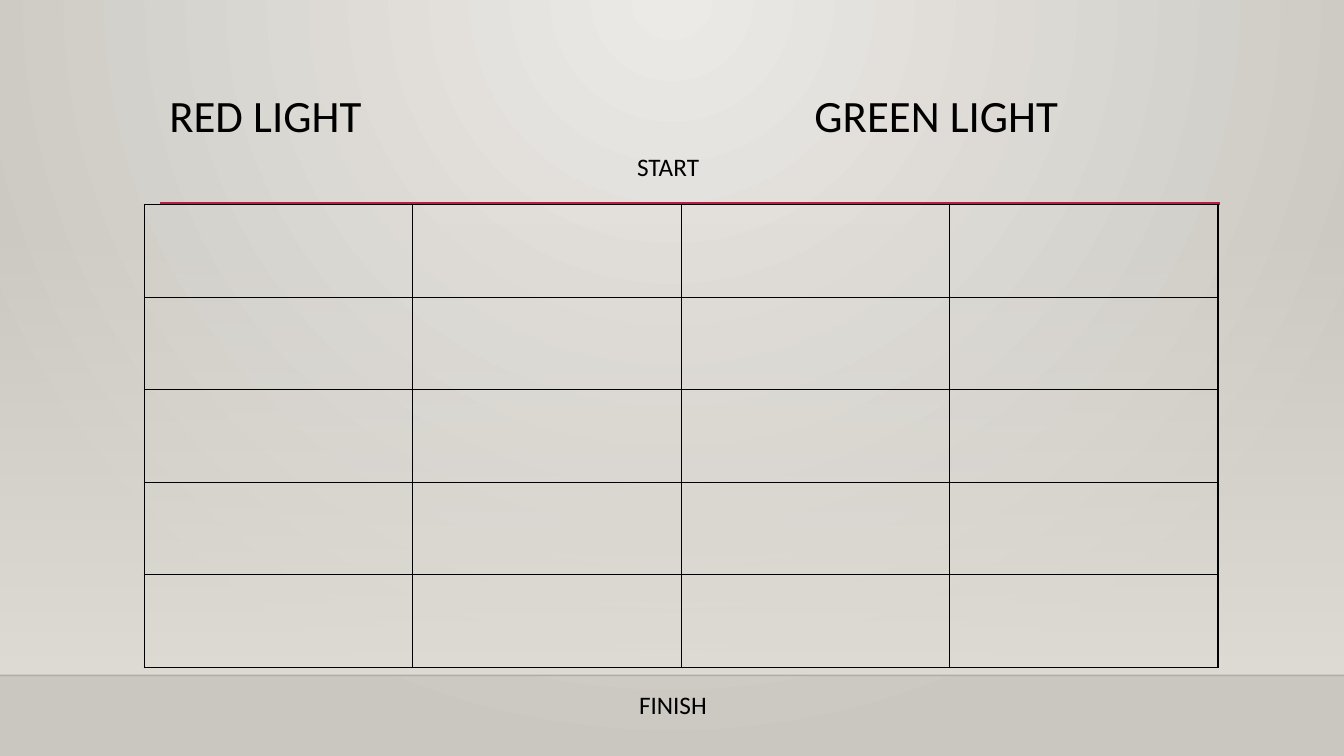
import pptx
import pptx.util
import pptx.dml.color
import pptx.enum.shapes
import pptx.enum.text
import pptx.oxml
import pptx.oxml.ns
from dataclasses import dataclass

qn = pptx.oxml.ns.qn
NS = pptx.oxml.ns.nsdecls("a")


@dataclass
class Theme:
    font: str = "Calibri"
    ink: str = "000000"
    accent: str = "B71E42"
    edge: str = "000001"
    floor: str = "DFDBD5"
    glow: str = "ECEAE7"
    shade: str = "CAC7C1"
    head: int = 32
    body: int = 18


def rgb(code):
    return pptx.dml.color.RGBColor.from_string(code)


def fade(color, share):
    """Set the opacity, in percent, of an srgbClr element."""
    color.append(pptx.oxml.parse_xml(f'<a:alpha {NS} val="{share * 1000}"/>'))


class Board:
    """Places elements on a slide; lengths are percent of its size."""

    def __init__(self, deck, theme):
        self.deck, self.theme = deck, theme
        self.slide = deck.slides.add_slide(deck.slide_layouts[5])
        self.shapes = self.slide.shapes

    def x(self, share):
        return round(self.deck.slide_width * share / 100)

    def y(self, share):
        return round(self.deck.slide_height * share / 100)

    def box(self, left, top, width, height):
        return self.x(left), self.y(top), self.x(width), self.y(height)

    def blend(self, fill, codes):
        fill.gradient()
        for stop, code in zip(fill.gradient_stops, codes):
            stop.color.rgb = rgb(code)

    def back(self):
        self.blend(self.slide.background.fill, (self.theme.glow, self.theme.shade))
        grad = self.slide.element.find(".//" + qn("a:gradFill"))
        grad.replace(grad.find(qn("a:lin")), pptx.oxml.parse_xml(
            f'<a:path {NS} path="circle">'
            '<a:fillToRect l="43000" t="0" r="43000" b="100000"/></a:path>'))

    def veil(self, *area):
        kind = pptx.enum.shapes.MSO_SHAPE.RECTANGLE
        shape = self.shapes.add_shape(kind, *self.box(*area))
        shape.shadow.inherit = False
        shape.line.fill.background()
        self.blend(shape.fill, (self.theme.floor, self.theme.floor))
        shape.fill.gradient_angle = 270
        fade(shape.element.spPr.find(".//" + qn("a:srgbClr")), 0)

    def rule(self, left, right, top, color, width, share=100):
        kind = pptx.enum.shapes.MSO_CONNECTOR.STRAIGHT
        line = self.shapes.add_connector(
            kind, self.x(left), self.y(top), self.x(right), self.y(top))
        line.line.color.rgb = rgb(color)
        line.line.width = pptx.util.Pt(width)
        props = line.element.spPr
        if share < 100:
            fade(props.find(".//" + qn("a:srgbClr")), share)
        props.append(pptx.oxml.parse_xml(f"<a:effectLst {NS}/>"))

    def words(self, shape, text, size, tab=None):
        frame = shape.text_frame
        frame.word_wrap = True
        frame.vertical_anchor = pptx.enum.text.MSO_ANCHOR.TOP
        para = frame.paragraphs[0]
        para.text = text
        para.alignment = pptx.enum.text.PP_ALIGN.LEFT
        if tab:
            para.line_spacing = 0.9
            para._p.get_or_add_pPr().append(pptx.oxml.parse_xml(
                f'<a:tabLst {NS}><a:tab pos="{self.x(tab)}" algn="l"/></a:tabLst>'))
        para.font.name = self.theme.font
        para.font.size = pptx.util.Pt(size)
        para.font.color.rgb = rgb(self.theme.ink)

    def title(self, text, tab, *area):
        shape = self.shapes.title
        shape.left, shape.top, shape.width, shape.height = self.box(*area)
        self.words(shape, text, self.theme.head, tab)

    def label(self, text, *area):
        shape = self.shapes.add_textbox(*self.box(*area))
        self.words(shape, text, self.theme.body)

    def grid(self, rows, cols, *area):
        table = self.shapes.add_table(rows, cols, *self.box(*area)).table
        table.first_row = table.horz_banding = False
        for cell in table.iter_cells():
            props = cell._tc.get_or_add_tcPr()
            for side in "LRTB":
                props.append(pptx.oxml.parse_xml(
                    f'<a:ln{side} {NS} w="12700"><a:solidFill>'
                    f'<a:srgbClr val="{self.theme.ink}"/>'
                    f'</a:solidFill></a:ln{side}>'))
            cell.fill.background()


def main():
    deck = pptx.Presentation()
    deck.slide_width = pptx.util.Inches(13.33)
    deck.slide_height = pptx.util.Inches(7.5)
    theme = Theme()
    board = Board(deck, theme)

    # Backdrop
    floor = 89.33
    board.back()
    board.veil(0, 29.47, 100, floor - 29.47)
    board.rule(0, 100, floor, theme.edge, 1, 20)

    # Heading and its rule
    board.rule(11.93, 90.77, 26.93, theme.accent, 2.5)
    board.title("RED LIGHT\tGREEN LIGHT", 48, 11.85, 11.73, 78.77, 15.33)

    # Game board
    board.grid(5, 4, 10.73, 27.07, 79.9, 61.2)
    board.label("START", 46.66, 19.33, 7.8, 5.33)
    board.label("FINISH", 46.81, 90.53, 7.65, 5.33)

    deck.save("out.pptx")


if __name__ == "__main__":
    main()
